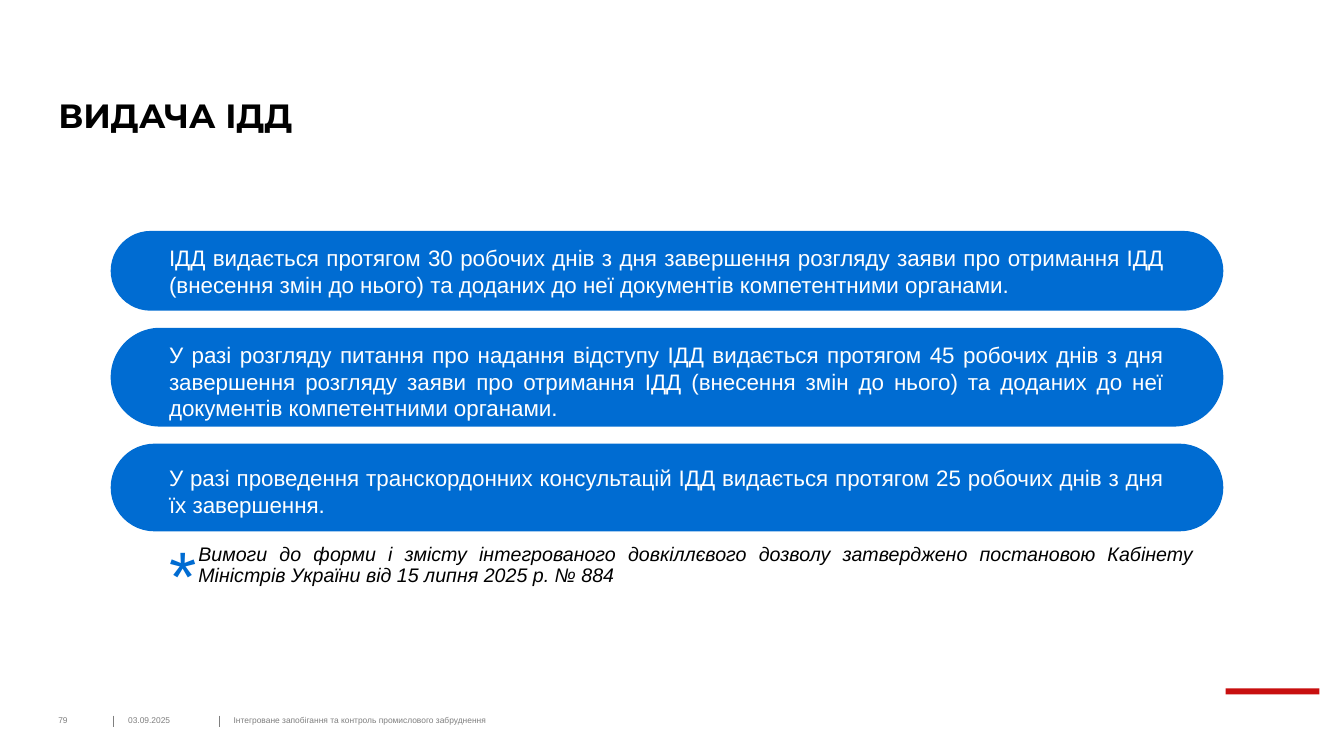
from lxml import etree
from pptx import Presentation
from pptx.dml.color import RGBColor
from pptx.enum.shapes import MSO_CONNECTOR, MSO_SHAPE
from pptx.enum.text import MSO_ANCHOR, PP_ALIGN
from pptx.oxml.ns import qn
from pptx.util import Cm, Pt

BLUE = RGBColor(0x00, 0x6C, 0xD2)
RED = RGBColor(0xC8, 0x0F, 0x0F)
GRAY = RGBColor(0x7F, 0x7F, 0x7F)
BLACK = RGBColor(0x00, 0x00, 0x00)
WHITE = RGBColor(0xFF, 0xFF, 0xFF)

RECTANGLE, PILL = MSO_SHAPE.RECTANGLE, MSO_SHAPE.ROUNDED_RECTANGLE
STRAIGHT = MSO_CONNECTOR.STRAIGHT
TOP, MIDDLE, BOTTOM = MSO_ANCHOR.TOP, MSO_ANCHOR.MIDDLE, MSO_ANCHOR.BOTTOM
LEFT, JUSTIFY = PP_ALIGN.LEFT, PP_ALIGN.JUSTIFY

TITLE = {"name": "Montserrat", "size": Pt(24), "bold": True}
TERM = {"name": "Arial", "size": Pt(16)}
NOTE = {"name": "Arial", "size": Pt(14), "italic": True}
STAR = {"name": "Arial", "size": Pt(50)}
FOOTER = {"name": "Arial", "size": Pt(6)}

PILL_TOP, PILL_GAP = 5.82, 0.43
TEXT_LEFT, TEXT_WIDTH = 4.01, 25.58
FOOTER_TOP, FOOTER_HEIGHT = 18.03, 0.25

# pill height, text offset, text height, text
TERMS = [
    (2.01, 0.2, 1.63,
     "ІДД видається протягом 30 робочих днів з дня завершення розгляду заяви "
     "про отримання ІДД (внесення змін до нього) та доданих до неї документів "
     "компетентними органами."),
    (2.49, 0.2, 2.31,
     "У разі розгляду питання про надання відступу ІДД видається протягом "
     "45 робочих днів з дня завершення розгляду заяви про отримання ІДД "
     "(внесення змін до нього) та доданих до неї документів компетентними "
     "органами."),
    (2.21, 0.38, 1.63,
     "У разі проведення транскордонних консультацій ІДД видається протягом "
     "25 робочих днів з дня їх завершення."),
]
NOTE_TEXT = (
    "Вимоги до форми і змісту інтегрованого довкіллєвого дозволу затверджено "
    "постановою Кабінету Міністрів України від 15 липня 2025 р. № 884")
FOOTERS = [
    (1.47, 1.3, "79"),
    (3.23, 2.01, "03.09.2025"),
    (5.89, 19, "Інтегроване запобігання та контроль промислового забруднення"),
]


def add_text(slide, place, text, style, color, align=LEFT, anchor=TOP,
             insets=(0.25, 0.13), spacing=1.0):
    """Add a wrapped text box with one styled paragraph."""
    box = slide.shapes.add_textbox(*map(Cm, place))
    frame = box.text_frame
    side, edge = map(Cm, insets)
    layout = {"word_wrap": True, "vertical_anchor": anchor,
              "margin_left": side, "margin_right": side,
              "margin_top": edge, "margin_bottom": edge}
    for name, value in layout.items():
        setattr(frame, name, value)
    para = frame.paragraphs[0]
    para.alignment = align
    para.line_spacing = spacing
    span = para.add_run()
    span.text = text
    for name, value in style.items():
        setattr(span.font, name, value)
    span.font.color.rgb = color


def add_block(slide, kind, place, color):
    """Add a filled shape without outline or shadow."""
    block = slide.shapes.add_shape(kind, *map(Cm, place))
    block.shadow.inherit = False
    block.fill.solid()
    block.fill.fore_color.rgb = color
    block.line.fill.background()
    return block


def add_divider(slide, left):
    """Add a short vertical line between footer fields."""
    divider = slide.shapes.add_connector(
        STRAIGHT, Cm(left), Cm(FOOTER_TOP), Cm(left), Cm(FOOTER_TOP + 0.28))
    divider.line.color.rgb = GRAY
    divider.line.width = Pt(0.75)
    etree.SubElement(divider._element.spPr, qn("a:effectLst"))


def add_terms(slide):
    """Stack the blue pills with their texts at an equal gap."""
    top = PILL_TOP
    for height, offset, text_height, text in TERMS:
        pill = add_block(slide, PILL, (2.79, top, 28.04, height), BLUE)
        pill.adjustments[0] = 0.5
        add_text(slide, (TEXT_LEFT, top + offset, TEXT_WIDTH, text_height),
                 text, TERM, WHITE, JUSTIFY)
        top += height + PILL_GAP


def add_footer(slide):
    """Add the footer fields and a divider before all but the first."""
    for index, (left, width, text) in enumerate(FOOTERS):
        add_text(slide, (left, FOOTER_TOP, width, FOOTER_HEIGHT), text,
                 FOOTER, GRAY, anchor=MIDDLE, insets=(0, 0))
        if index:
            add_divider(slide, left - 0.36)


def main():
    """Build the slide and save the deck."""
    deck = Presentation()
    deck.slide_width, deck.slide_height = Cm(33.87), Cm(19.05)
    page = deck.slides.add_slide(deck.slide_layouts[6])
    add_text(page, (1.47, 1.19, 20.4, 2.24), "ВИДАЧА ІДД", TITLE, BLACK,
             anchor=BOTTOM, insets=(0, 0), spacing=0.9)
    add_terms(page)
    add_text(page, (4.75, 13.59, TEXT_WIDTH, 1.7), NOTE_TEXT, NOTE, BLACK,
             JUSTIFY, spacing=0.9)
    add_text(page, (TEXT_LEFT, 13.26, 1.32, 2.39), "*", STAR, BLUE)
    add_block(page, RECTANGLE, (30.89, 17.35, 2.36, 0.15), RED)
    add_footer(page)
    deck.save("out.pptx")


if __name__ == "__main__":
    main()
